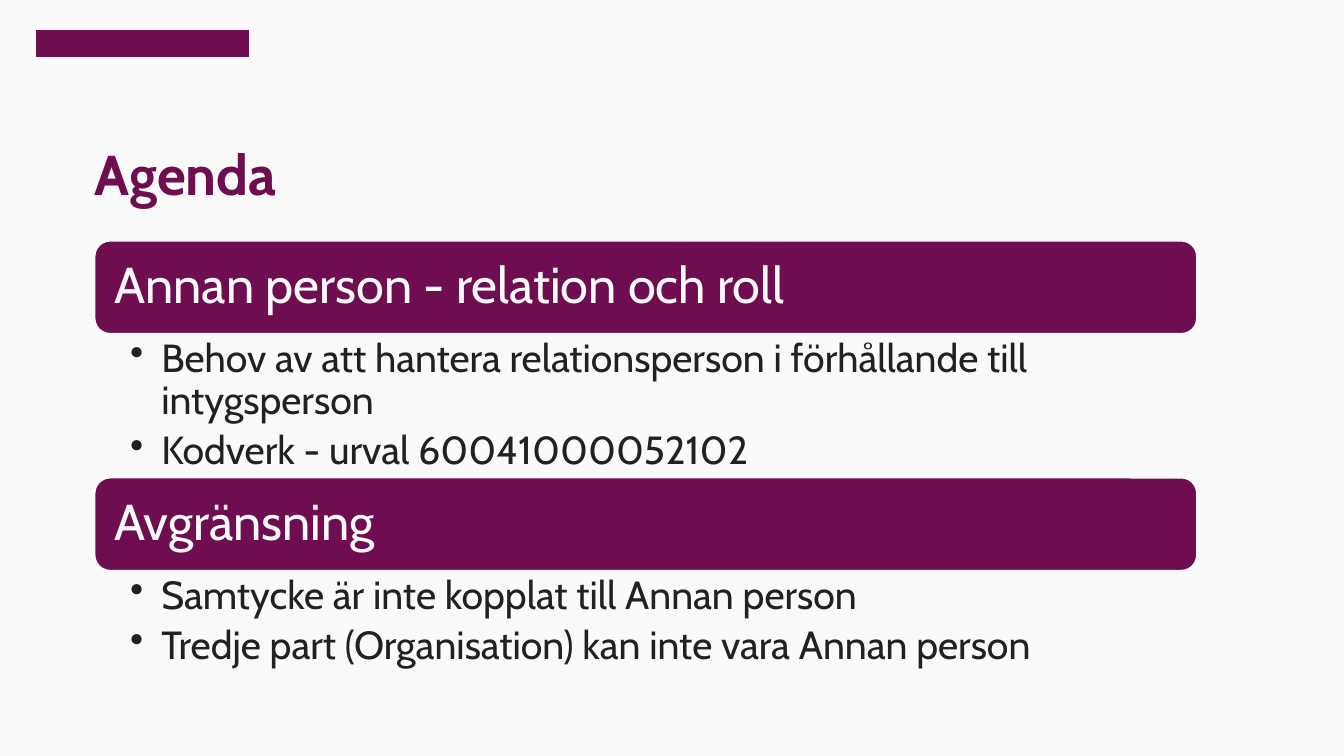
from lxml.etree import SubElement
from pptx import Presentation
from pptx.dml.color import RGBColor
from pptx.enum.shapes import MSO_SHAPE
from pptx.enum.text import MSO_ANCHOR, MSO_AUTO_SIZE, PP_ALIGN
from pptx.oxml.ns import qn
from pptx.util import Inches, Pt

TITLE = "Agenda"
# Heading, height of the list below it in inches, list items
SECTIONS = [
    ("Annan person - relation och roll", 1.43, [
        "Behov av att hantera relationsperson i förhållande till intygsperson",
        "Kodverk - urval 60041000052102",
    ]),
    ("Avgränsning", 1.02, [
        "Samtycke är inte kopplat till Annan person",
        "Tredje part (Organisation) kan inte vara Annan person",
    ]),
]

PLUM = RGBColor(0x6E, 0x0E, 0x50)
PAPER = RGBColor(0xFA, 0xFA, 0xFA)
INK = RGBColor(0x21, 0x21, 0x21)
FONT = "Cabin"

LEFT, CONTENT_TOP, CONTENT_WIDTH = 0.94, 2.39, 10.93
BAND_HEIGHT = 0.92
HANGING = Inches(0.31)


def box(left, top, width, height):
    return [Inches(length) for length in (left, top, width, height)]


def write(frame, *lines, size, color, bold=False, insets=(0, 0, 0, 0),
          anchor=MSO_ANCHOR.TOP, space_after=0, bullet=None):
    """Fill a text frame with one paragraph per line; insets run left, top, right, bottom."""
    frame.word_wrap = True
    frame.auto_size = MSO_AUTO_SIZE.NONE
    frame.vertical_anchor = anchor
    (frame.margin_left, frame.margin_top,
     frame.margin_right, frame.margin_bottom) = [Inches(i) for i in insets]
    for index, line in enumerate(lines):
        paragraph = frame.add_paragraph() if index else frame.paragraphs[0]
        paragraph.alignment = PP_ALIGN.LEFT
        paragraph.line_spacing = 0.9
        paragraph.space_after = Pt(space_after)
        run = paragraph.add_run()
        run.text = line
        run.font.name = FONT
        run.font.size = Pt(size)
        run.font.bold = bold
        run.font.color.rgb = color
        if bullet:
            properties = paragraph._p.get_or_add_pPr()
            properties.set("marL", str(HANGING))
            properties.set("indent", str(-HANGING))
            SubElement(properties, qn("a:buChar")).set("char", bullet)


def add_filled(slide, preset, bounds):
    shape = slide.shapes.add_shape(preset, *bounds)
    shape.shadow.inherit = False
    shape.fill.solid()
    shape.fill.fore_color.rgb = PLUM
    shape.line.color.rgb = PAPER
    shape.line.width = Pt(1)
    return shape


def main():
    deck = Presentation()
    deck.slide_width, deck.slide_height = Inches(13.33), Inches(7.5)
    slide = deck.slides.add_slide(deck.slide_layouts[5])
    slide.background.fill.solid()
    slide.background.fill.fore_color.rgb = PAPER

    add_filled(slide, MSO_SHAPE.RECTANGLE, box(0.35, 0.29, 2.13, 0.28))

    title = slide.shapes.title
    title.left, title.top, title.width, title.height = box(LEFT, 1.45, 7, 0.61)
    write(title.text_frame, TITLE, size=40, color=PLUM, bold=True,
          anchor=MSO_ANCHOR.BOTTOM)

    top = CONTENT_TOP
    for heading, list_height, items in SECTIONS:
        band = add_filled(slide, MSO_SHAPE.ROUNDED_RECTANGLE,
                          box(LEFT, top, CONTENT_WIDTH, BAND_HEIGHT))
        write(band.text_frame, heading, size=36, color=PAPER,
              insets=(0.15, 0.15, 0.15, 0.15), anchor=MSO_ANCHOR.MIDDLE)
        top += BAND_HEIGHT
        points = slide.shapes.add_textbox(*box(LEFT, top, CONTENT_WIDTH, list_height))
        write(points.text_frame, *items, size=28, color=INK,
              insets=(0.35, 0.05, 0.28, 0.05), space_after=5.6, bullet="•")
        top += list_height

    deck.save("out.pptx")


if __name__ == "__main__":
    main()
